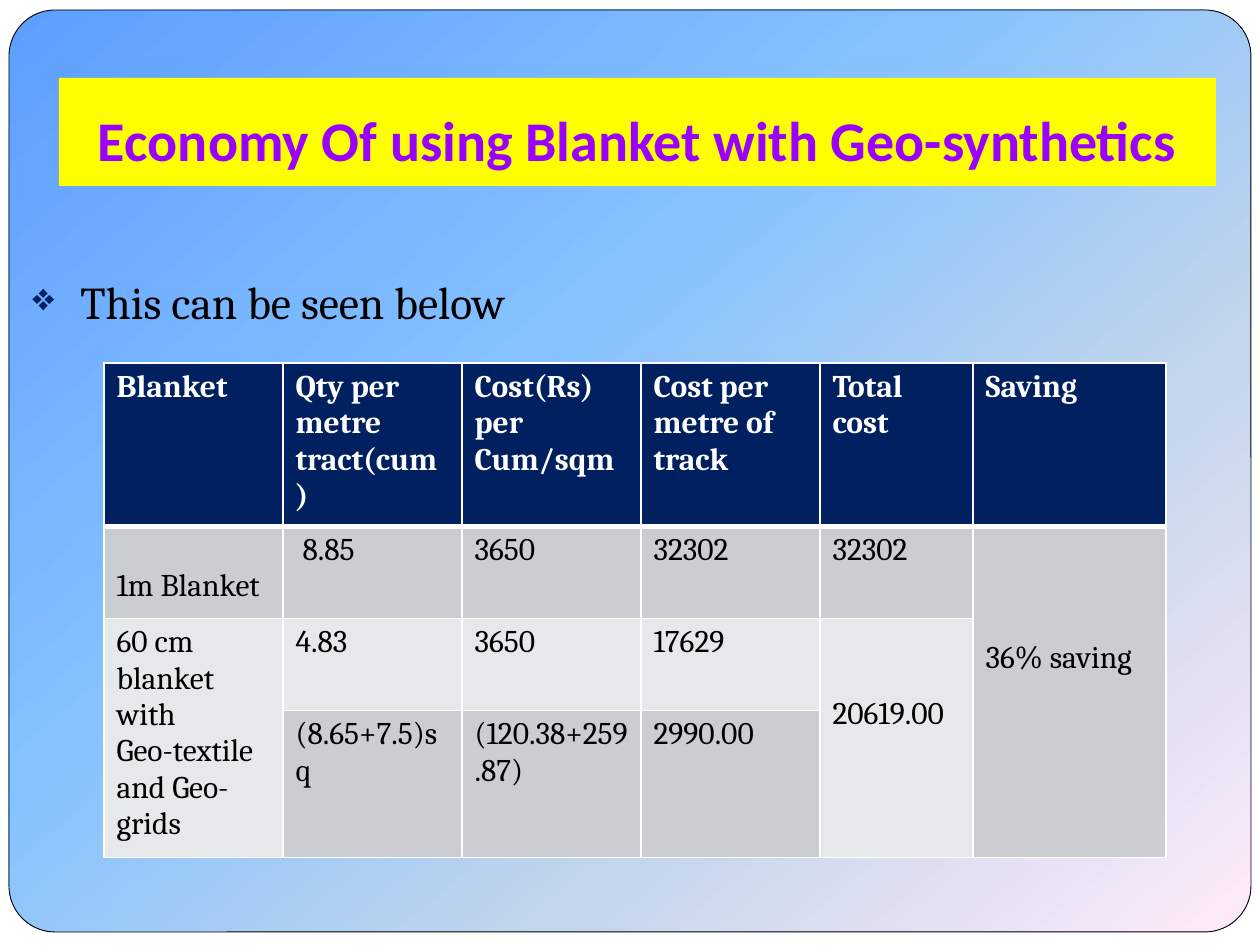
from lxml import etree
from pptx import Presentation
from pptx import util as u
from pptx.dml.color import RGBColor
from pptx.enum import shapes, text
from pptx.oxml.ns import qn

PX_PER_INCH = 126
COLORS = {
    "white": "FFFFFF", "black": "000000", "navy": "002060", "yellow": "FFFF00",
    "purple": "9900FF", "dark_band": "CCCDD2", "light_band": "E7E8EA",
}
GRADIENT = [(0, "5E9EFF"), (40, "85C2FF"), (70, "C4D6EB"), (100, "FFEBFA")]
GRADIENT_ANGLE = 50

COLUMNS = [179, 179, 179, 179, 153, 193]
ROWS = [158, 92, 92, 139]
BANDS = ["navy", "dark_band", "light_band", "dark_band"]
COSTS = [
    ["Blanket", "Qty per metre tract(cum)", "Cost(Rs) per Cum/sqm",
     "Cost per metre of track", "Total cost", "Saving"],
    ["1m Blanket", " 8.85", "3650", "32302", "32302", "36% saving"],
    ["60 cm blanket with\nGeo-textile and Geo-grids", "4.83", "3650", "17629", "20619.00", None],
    [None, "(8.65+7.5)sq", "(120.38+259.87)", "2990.00", None, None],
]
MERGES = [((1, 5), (3, 5)), ((2, 0), (3, 0)), ((2, 4), (3, 4))]
LINES_ABOVE = {(1, 0): 1, (1, 5): 3, (2, 4): 2}
CELL_LINE = 36
CELL_INSET = 6


def px(n):
    return u.Emu(round(n * 914400 / PX_PER_INCH))


def rgb(name):
    return RGBColor.from_string(COLORS[name])


class Deck:
    def __init__(self):
        self.prs = Presentation()
        self.prs.slide_width, self.prs.slide_height = px(1260), px(945)
        self.s = self.prs.slides.add_slide(self.prs.slide_layouts[6])
        fill = self.s.background.fill
        fill.solid()
        fill.fore_color.rgb = rgb("white")

    def style(self, tf, font, size, color, bold=False):
        for p in tf.paragraphs:
            for r in p.runs:
                r.font.name, r.font.size, r.font.bold = font, u.Pt(size), bold
                r.font.color.rgb = rgb(color)

    def panel(self, x, y, w, h):
        sp = self.s.shapes.add_shape(shapes.MSO_SHAPE.ROUNDED_RECTANGLE, px(x), px(y), px(w), px(h))
        sp.shadow.inherit = False
        sp.adjustments[0] = 0.05
        sp.line.color.rgb, sp.line.width = rgb("black"), u.Pt(0.5)
        sp.fill.gradient()
        grad = sp._element.spPr.find(qn("a:gradFill"))
        for child in list(grad):
            grad.remove(child)
        stops = etree.SubElement(grad, qn("a:gsLst"))
        for pos, color in GRADIENT:
            gs = etree.SubElement(stops, qn("a:gs"), pos=str(pos * 1000))
            etree.SubElement(gs, qn("a:srgbClr"), val=color)
        etree.SubElement(grad, qn("a:lin"), ang=str(GRADIENT_ANGLE * 60000), scaled="0")

    def title(self, x, y, w, h, words):
        sp = self.s.shapes.add_shape(shapes.MSO_SHAPE.RECTANGLE, px(x), px(y), px(w), px(h))
        sp.shadow.inherit = False
        sp.fill.solid()
        sp.fill.fore_color.rgb = rgb("yellow")
        sp.line.fill.background()
        tf = sp.text_frame
        tf.text = words
        tf.margin_bottom = px(13)
        tf.vertical_anchor = text.MSO_ANCHOR.BOTTOM
        tf.paragraphs[0].alignment = text.PP_ALIGN.CENTER
        self.style(tf, "Calibri", 32, "purple", True)

    def bullet(self, x, y, w, h, words):
        tf = self.s.shapes.add_textbox(px(x), px(y), px(w), px(h)).text_frame
        tf.word_wrap = True
        tf.text = words
        self.style(tf, "Cambria", 26, "black")
        pPr = tf.paragraphs[0]._p.get_or_add_pPr()
        pPr.set("marL", str(px(38)))
        pPr.set("indent", str(-px(38)))
        color = etree.SubElement(pPr, qn("a:buClr"))
        etree.SubElement(color, qn("a:srgbClr"), val=COLORS["navy"])
        etree.SubElement(pPr, qn("a:buSzPct"), val="85000")
        etree.SubElement(pPr, qn("a:buChar"), char="❖")

    def borders(self, cell, bottom, top):
        tcPr = cell._tc.get_or_add_tcPr()
        for side, width in (("lnL", 1), ("lnR", 1), ("lnT", top), ("lnB", bottom)):
            ln = etree.SubElement(tcPr, qn(f"a:{side}"), w=str(u.Pt(width)))
            fill = etree.SubElement(ln, qn("a:solidFill"))
            etree.SubElement(fill, qn("a:srgbClr"), val=COLORS["white"])

    def table(self, x, y, rows):
        shape = self.s.shapes.add_table(len(ROWS), len(COLUMNS), px(x), px(y),
                                        px(sum(COLUMNS)), px(sum(ROWS)))
        tbl = shape.table
        for col, w in zip(tbl.columns, COLUMNS):
            col.width = px(w)
        for row, h in zip(tbl.rows, ROWS):
            row.height = px(h)
        for first, last in MERGES:
            tbl.cell(*first).merge(tbl.cell(*last))
        for i, values in enumerate(rows):
            for j, value in enumerate(values):
                cell = tbl.cell(i, j)
                self.borders(cell, 3 if i == 0 else 1, 3 if i == 1 else 1)
                cell.fill.solid()
                cell.fill.fore_color.rgb = rgb(BANDS[i])
                if value is None:
                    continue
                cell.text_frame.text = value
                cell.margin_top = px(CELL_INSET + CELL_LINE * LINES_ABOVE.get((i, j), 0))
                self.style(cell.text_frame, "Cambria", 18, "black" if i else "white", i == 0)


def main():
    deck = Deck()
    deck.panel(9, 10, 1242, 922)
    deck.bullet(20, 268, 1240, 65, " This can be seen below")
    deck.table(104, 363, COSTS)
    deck.title(59, 78, 1157, 108, "Economy Of using Blanket with Geo-synthetics")
    deck.prs.save("out.pptx")


if __name__ == "__main__":
    main()
